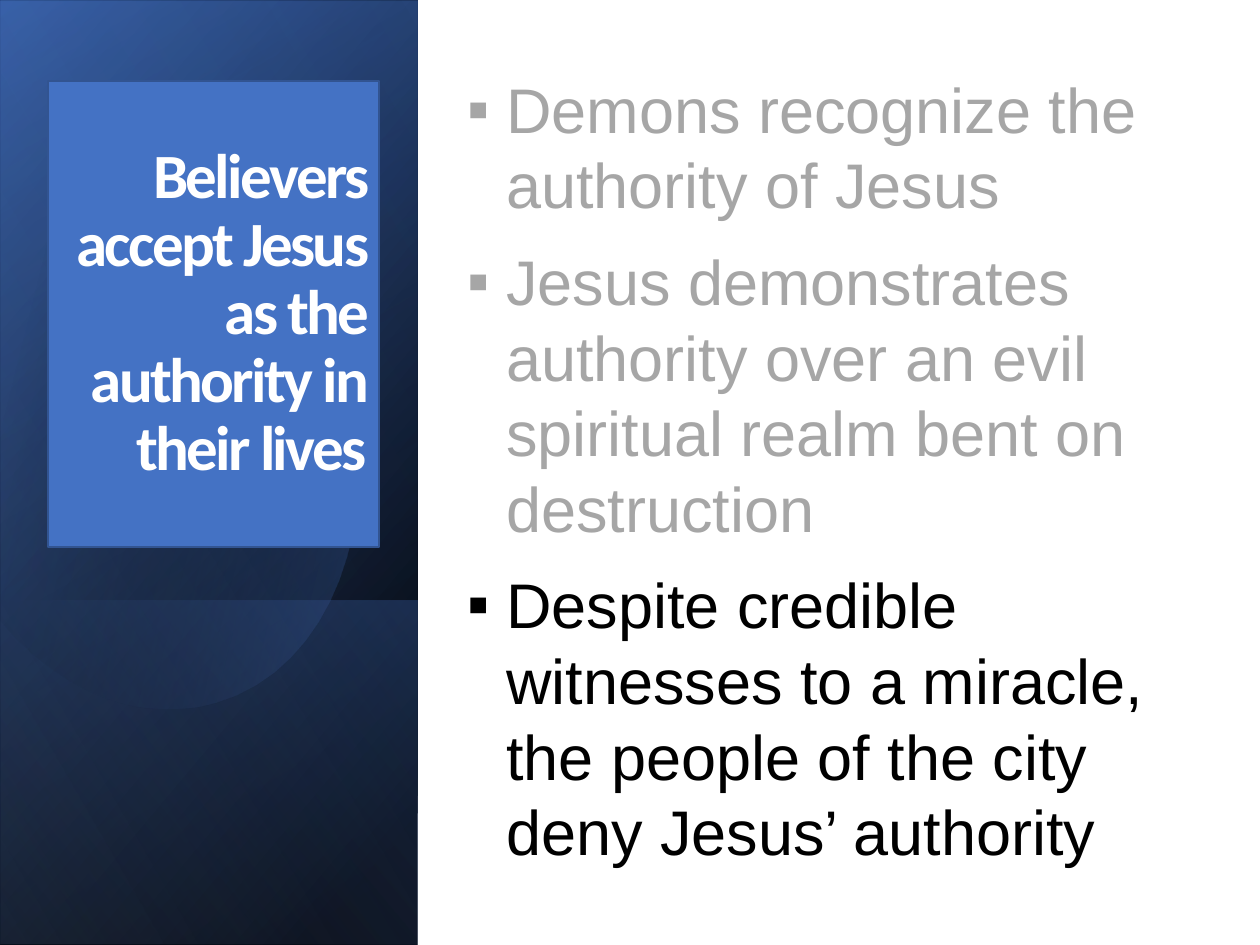
from math import cos, radians, sin

from pptx import Presentation
from pptx.dml.color import RGBColor
from pptx.enum.shapes import MSO_SHAPE
from pptx.enum.text import MSO_ANCHOR, MSO_AUTO_SIZE, PP_ALIGN
from pptx.oxml import parse_xml
from pptx.oxml.ns import nsdecls, qn
from pptx.util import Inches, Pt

WHITE = RGBColor(0xFF, 0xFF, 0xFF)
BLACK = RGBColor(0x00, 0x00, 0x00)
GREY = RGBColor(0xA6, 0xA6, 0xA6)
BLUE = RGBColor(0x44, 0x72, 0xC4)
DARK_BLUE = RGBColor(0x2F, 0x55, 0x97)
LIGHT_BLUE = RGBColor(0x8F, 0xAA, 0xDC)
EDGE_BLUE = RGBColor(0x32, 0x54, 0x91)

TITLE = "Believers accept Jesus as the authority in their lives"
POINTS = [
    ("Demons recognize the authority of Jesus", GREY),
    ("Jesus demonstrates authority over an evil spiritual realm bent on destruction", GREY),
    ("Despite credible witnesses to a miracle, the people of the city deny Jesus’ authority", BLACK),
]

# Gradient layers of the side panel: box, stops (position, colour, opacity), angle
PANEL_LAYERS = [
    ((-2.09, 2.1, 7.5, 3.31), [(8, BLACK, 100), (100, DARK_BLUE, 100)], 50),
    ((-2.09, 2.11, 7.5, 3.31), [(0, BLACK, 0), (99, BLUE, 46)], 30),
    ((0.29, 4.48, 2.74, 3.31), [(2, BLUE, 29), (100, BLACK, 30)], 130),
]
PANEL_SHEEN = ((-2.09, 2.08, 7.5, 3.31), [(0, BLACK, 0), (99, LIGHT_BLUE, 11)], 120)

# Outline of the tilted disc: each step is a line end or a cubic curve
DISC_START = (0.96, 1.14)
DISC_STEPS = [
    [(1.71, 1.22), (2.44, 1.92), (2.73, 2.9)],
    [(3.07, 4.12), (2.62, 5.31), (1.71, 5.57)],
    [(1.14, 5.74), (0.53, 5.5), (0.07, 5)],
    [(-0.03, 4.88)],
    [(-0.25, 1.66)],
    [(-0.15, 1.54)],
    [(0.02, 1.37), (0.22, 1.25), (0.45, 1.18)],
    [(0.62, 1.13), (0.79, 1.12), (0.96, 1.14)],
]
DISC_CENTRE = (1.19, 3.35)
DISC_TILT = -16.1
CURVE_PARTS = 16


def inches(box):
    return [Inches(length) for length in box]


def fill_gradient(shape, stops, angle):
    shape.shadow.inherit = False
    shape.line.fill.background()
    shape.fill.background()
    marks = "".join(
        f'<a:gs pos="{position * 1000}"><a:srgbClr val="{colour}">'
        f'<a:alpha val="{opacity * 1000}"/></a:srgbClr></a:gs>'
        for position, colour, opacity in stops
    )
    gradient = parse_xml(
        f'<a:gradFill {nsdecls("a")} rotWithShape="1"><a:gsLst>{marks}</a:gsLst>'
        f'<a:lin ang="{angle * 60000}" scaled="0"/></a:gradFill>'
    )
    properties = shape.element.spPr
    properties.replace(properties.find(qn("a:noFill")), gradient)


def add_layer(page, box, stops, angle):
    layer = page.shapes.add_shape(MSO_SHAPE.RECTANGLE, *inches(box))
    layer.rotation = 90
    layer.element.spPr.find(qn("a:xfrm")).set("flipH", "1")
    fill_gradient(layer, stops, angle)


def curve_points(start, first, second, end):
    for part in range(1, CURVE_PARTS + 1):
        t = part / CURVE_PARTS
        weights = ((1 - t) ** 3, 3 * t * (1 - t) ** 2, 3 * t * t * (1 - t), t ** 3)
        corners = (start, first, second, end)
        yield tuple(sum(w * c[axis] for w, c in zip(weights, corners)) for axis in (0, 1))


def upright(point):
    """Turn a point back by the tilt, in whole EMU."""
    turn = radians(-DISC_TILT)
    dx, dy = point[0] - DISC_CENTRE[0], point[1] - DISC_CENTRE[1]
    return (
        Inches(DISC_CENTRE[0] + dx * cos(turn) - dy * sin(turn)),
        Inches(DISC_CENTRE[1] + dx * sin(turn) + dy * cos(turn)),
    )


def add_disc(page):
    outline = [DISC_START]
    for step in DISC_STEPS:
        outline += curve_points(outline[-1], *step) if len(step) == 3 else step
    start, *others = [upright(point) for point in outline]
    builder = page.shapes.build_freeform(*start)
    builder.add_line_segments(others, close=True)
    disc = builder.convert_to_shape()
    disc.rotation = DISC_TILT
    fill_gradient(disc, [(29, BLACK, 0), (100, BLUE, 43)], 30)


def add_side_panel(page):
    for layer in PANEL_LAYERS:
        add_layer(page, *layer)
    add_disc(page)
    add_layer(page, *PANEL_SHEEN)


def add_backdrop(page, box):
    backdrop = page.shapes.add_shape(MSO_SHAPE.RECTANGLE, *inches(box))
    backdrop.shadow.inherit = False
    backdrop.fill.solid()
    backdrop.fill.fore_color.rgb = WHITE
    backdrop.line.fill.background()


def add_span(para, text, font_name, colour):
    span = para.add_run()
    span.text = text
    span.font.name = font_name
    span.font.size = Pt(36)
    span.font.color.rgb = colour
    return span


def add_points(page, box):
    frame = page.shapes.add_textbox(*inches(box)).text_frame
    frame.word_wrap = True
    frame.auto_size = MSO_AUTO_SIZE.SHAPE_TO_FIT_TEXT
    for index, (text, colour) in enumerate(POINTS):
        para = frame.add_paragraph() if index else frame.paragraphs[0]
        para.space_after = Pt(12)
        add_span(para, text, "Arial", colour)
        # Hanging square bullet
        properties = para._p.get_or_add_pPr()
        properties.set("marL", str(Inches(0.31)))
        properties.set("indent", str(-Inches(0.31)))
        properties.append(parse_xml(f'<a:buFont {nsdecls("a")} typeface="Arial"/>'))
        properties.append(parse_xml(f'<a:buChar {nsdecls("a")} char="▪"/>'))


def place_title(page, box):
    title = page.shapes.title
    title.left, title.top, title.width, title.height = inches(box)
    title.fill.solid()
    title.fill.fore_color.rgb = BLUE
    title.line.color.rgb = EDGE_BLUE
    title.line.width = Pt(1)
    frame = title.text_frame
    frame.word_wrap = True
    frame.auto_size = MSO_AUTO_SIZE.NONE
    frame.vertical_anchor = MSO_ANCHOR.MIDDLE
    para = frame.paragraphs[0]
    para.alignment = PP_ALIGN.RIGHT
    para.line_spacing = 0.9
    para.space_before = Pt(0)
    para.space_after = Pt(6)
    span = add_span(para, TITLE, "Calibri", WHITE)
    span.font.bold = True
    span.font._element.set("spc", "-150")
    # Bring the title in front of the panel
    title.element.getparent().append(title.element)


def main():
    deck = Presentation()
    deck.slide_width, deck.slide_height = Inches(10), Inches(7.5)
    page = deck.slides.add_slide(deck.slide_layouts[5])
    add_backdrop(page, (0, 0, 10, 7.5))
    add_side_panel(page)
    add_points(page, (3.61, 0.51, 6.1, 6.5))
    place_title(page, (0.38, 0.64, 2.63, 3.7))
    deck.save("out.pptx")


if __name__ == "__main__":
    main()
